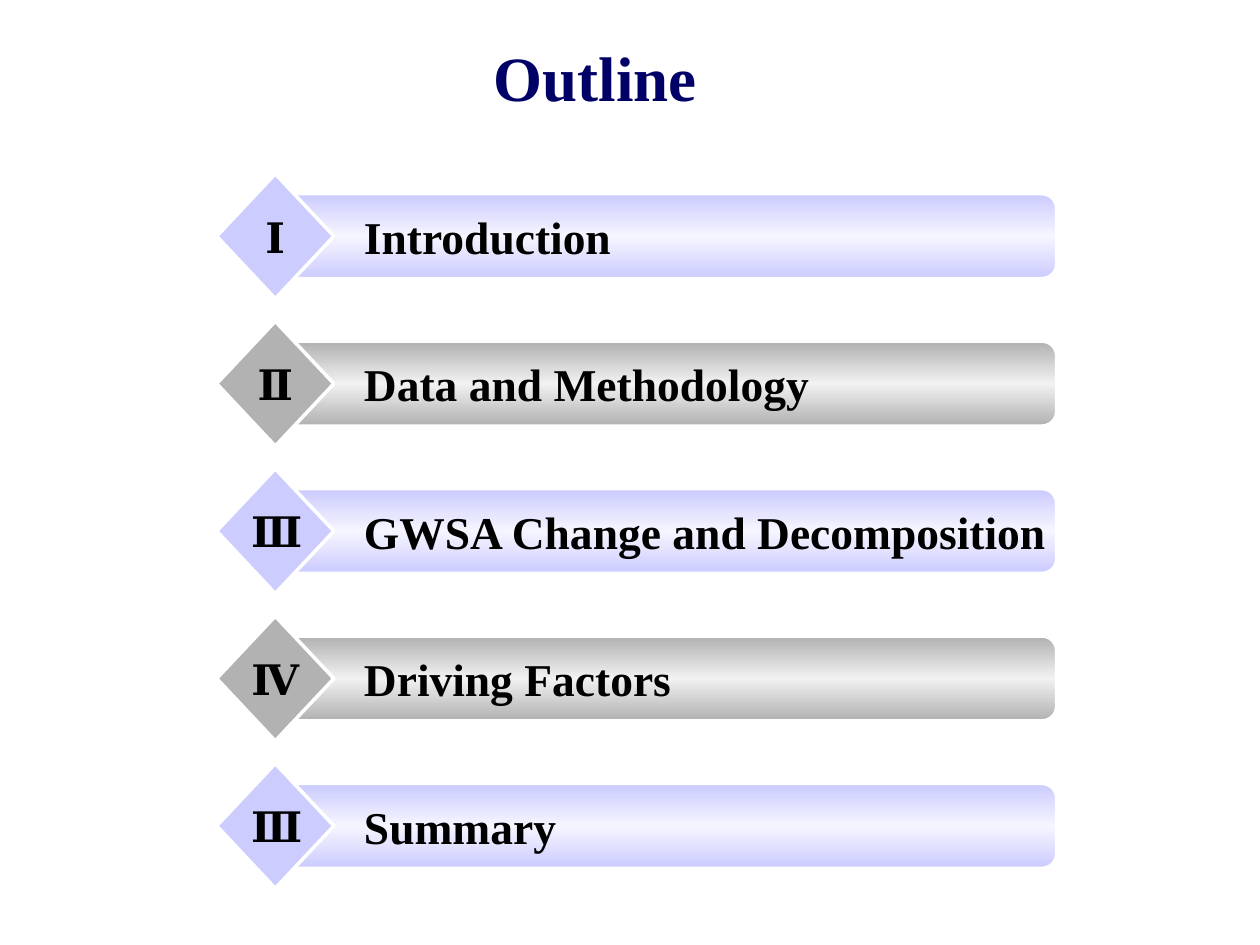
from copy import deepcopy

from pptx import Presentation
from pptx.dml.color import RGBColor
from pptx.enum.shapes import MSO_SHAPE as SHAPE
from pptx.enum.text import MSO_ANCHOR as ANCHOR, PP_ALIGN as ALIGN
from pptx.util import Inches, Pt

FONT = "Times New Roman"
WHITE, BLACK, NAVY = "FFFFFF", "000000", "000066"
LAVENDER = ("CCCCFF", "F5F5FF")  # edge, middle
GRAY = ("B2B2B2", "F1F1F1")

TITLE = "Outline"
SECTIONS = [  # numeral, heading, heading width
    ("Ⅰ", "Introduction", 5.05),
    ("Ⅱ", "Data and Methodology", 5.05),
    ("Ⅲ", "GWSA Change and Decomposition", 5.82),
    ("Ⅳ", "Driving Factors", 5.05),
    ("Ⅲ", "Summary", 5.05),
]

FIRST_TOP, PITCH = 1.38, 1.17
DIAMOND_LEFT, DIAMOND_W, DIAMOND_H = 1.72, 0.93, 0.99
BAR_LEFT, BAR_W, BAR_H = 2.24, 6.14, 0.66
HEADING_LEFT = 2.79
NUMERAL_W, NUMERAL_H = 0.58, 0.5


def color(hex_code):
    return RGBColor.from_string(hex_code)


def add_block(slide, kind, box, line_width):
    block = slide.shapes.add_shape(kind, *map(Inches, box))
    block.shadow.inherit = False
    block.line.color.rgb = color(WHITE)
    block.line.width = Pt(line_width)
    return block


def fill_with_sheen(fill, edge, middle):
    """Vertical gradient that is lightest halfway down."""
    fill.gradient()
    fill.gradient_angle = 90
    first = fill.gradient_stops[0]._gs
    first.addnext(deepcopy(first))
    for stop, position, shade in zip(fill.gradient_stops, (0, 0.5, 1), (edge, middle, edge)):
        stop.position = position
        stop.color.rgb = color(shade)


def add_text(slide, text, box, size, shade=BLACK, align=ALIGN.LEFT,
             anchor=ANCHOR.MIDDLE, wrap=True):
    frame = slide.shapes.add_textbox(*map(Inches, box)).text_frame
    frame.word_wrap = wrap
    frame.vertical_anchor = anchor
    paragraph = frame.paragraphs[0]
    paragraph.alignment = align
    run = paragraph.add_run()
    run.text = text
    run.font.name = FONT
    run.font.size = Pt(size)
    run.font.bold = True
    run.font.color.rgb = color(shade)
    return frame


def add_section(slide, top, numeral, heading, heading_width, edge, middle):
    bar_top = top + (DIAMOND_H - BAR_H) / 2
    bar = add_block(slide, SHAPE.ROUNDED_RECTANGLE, (BAR_LEFT, bar_top, BAR_W, BAR_H), 1)
    fill_with_sheen(bar.fill, edge, middle)

    diamond = add_block(slide, SHAPE.DIAMOND, (DIAMOND_LEFT, top, DIAMOND_W, DIAMOND_H), 2)
    diamond.fill.solid()
    diamond.fill.fore_color.rgb = color(edge)

    add_text(slide, heading, (HEADING_LEFT, bar_top, heading_width, BAR_H), 26)
    numeral_box = (DIAMOND_LEFT + (DIAMOND_W - NUMERAL_W) / 2,
                   top + (DIAMOND_H - NUMERAL_H) / 2, NUMERAL_W, NUMERAL_H)
    add_text(slide, numeral, numeral_box, 24, align=ALIGN.CENTER, wrap=False)


def main():
    prs = Presentation()
    prs.slide_width, prs.slide_height = Inches(10), Inches(7.5)
    slide = prs.slides.add_slide(prs.slide_layouts[6])

    title = add_text(slide, TITLE, (1.14, 0.21, 7.17, 0.9), 36, NAVY, ALIGN.CENTER, ANCHOR.TOP)
    title.margin_top = Inches(0.1)
    for i, section in enumerate(SECTIONS):
        add_section(slide, FIRST_TOP + i * PITCH, *section, *(LAVENDER, GRAY)[i % 2])

    prs.save("out.pptx")


if __name__ == "__main__":
    main()
